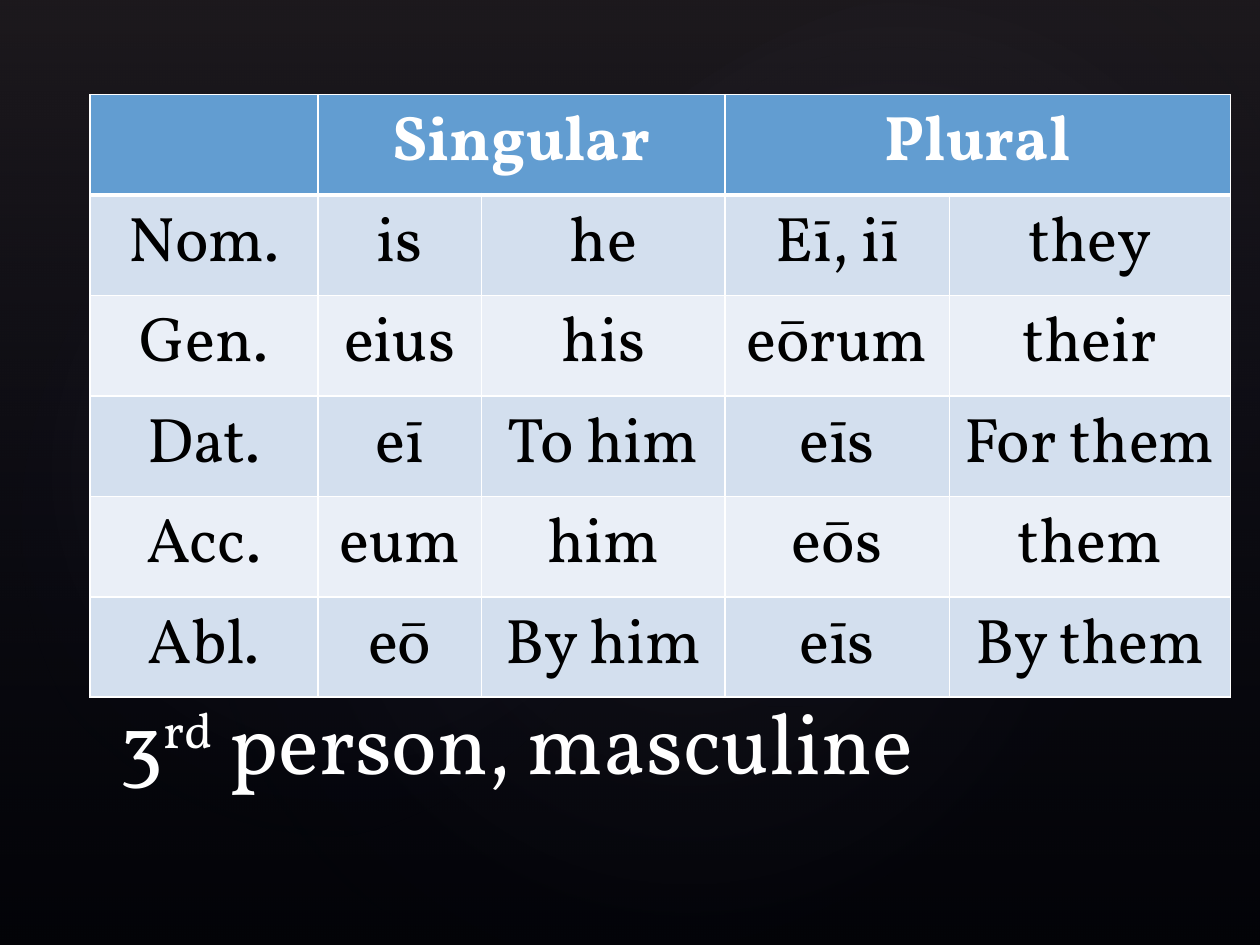
from pptx import Presentation
from pptx.dml.color import RGBColor
from pptx.enum.shapes import MSO_SHAPE as Preset
from pptx.enum.text import MSO_ANCHOR as Anchor, PP_ALIGN as Align
from pptx.oxml import parse_xml
from pptx.oxml.ns import nsdecls, qn
from pptx.util import Pt

FONT = "Vollkorn"
BLACK = RGBColor(0x00, 0x00, 0x00)
WHITE = RGBColor(0xFF, 0xFF, 0xFF)
HEADER_BLUE = RGBColor(0x62, 0x9D, 0xD1)
BAND_DARK = RGBColor(0xD3, 0xDF, 0xEE)
BAND_LIGHT = RGBColor(0xEA, 0xEF, 0xF7)
NAVY = RGBColor(0x24, 0x28, 0x52)
PLUM = RGBColor(0x50, 0x46, 0x52)
MAUVE = RGBColor(0xC4, 0xBC, 0xC6)

DOWNWARD = '<a:lin ang="5400000" scaled="0"/>'
RADIAL = ('<a:path path="circle">'
          '<a:fillToRect l="50000" t="50000" r="50000" b="50000"/></a:path>')
GLOWS = [
    (108, 82, 570, 449, 328.7, 7),
    (-21.6, 92, 436, 353, 294.3, 8),
    (258, 9.4, 510, 374, 328.7, 8),
]

COLUMN_WIDTHS = [130.3, 93.6, 139, 128.2, 160.6]
ROW_HEIGHT = 57.4
DECLENSION = [
    ["", "Singular", "", "Plural", ""],
    ["Nom.", "is", "he", "Eī, iī", "they"],
    ["Gen.", "eius", "his", "eōrum", "their"],
    ["Dat.", "eī", "To him", "eīs", "For them"],
    ["Acc.", "eum", "him", "eōs", "them"],
    ["Abl.", "eō", "By him", "eīs", "By them"],
]


def add_gradient_shape(slide, preset, box, stops, direction, rotation=0):
    shape = slide.shapes.add_shape(preset, *map(Pt, box))
    shape.shadow.inherit = False
    shape.line.fill.background()
    shape.rotation = rotation
    shape.fill.background()
    stop_list = "".join(
        f'<a:gs pos="{position * 1000}"><a:srgbClr val="{color}">'
        f'<a:alpha val="{opacity * 1000}"/></a:srgbClr></a:gs>'
        for position, color, opacity in stops)
    gradient = parse_xml(
        f'<a:gradFill {nsdecls("a")} rotWithShape="1">'
        f'<a:gsLst>{stop_list}</a:gsLst>{direction}</a:gradFill>')
    properties = shape.fill._xPr
    properties.replace(properties.find(qn("a:noFill")), gradient)


def add_backdrop(slide):
    slide.background.fill.solid()
    slide.background.fill.fore_color.rgb = BLACK
    add_gradient_shape(slide, Preset.RECTANGLE, (0, 0, 720, 540),
                       [(0, PLUM, 36), (100, NAVY, 10)], DOWNWARD)
    for *box, rotation, opacity in GLOWS:
        add_gradient_shape(slide, Preset.OVAL, box,
                           [(0, MAUVE, opacity), (58, NAVY, 0)], RADIAL, rotation)


def format_run(run, size, color, bold=False):
    run.font.name = FONT
    run.font.size = Pt(size)
    run.font.bold = bold
    run.font.color.rgb = color


def add_borders(cell, bottom_width):
    properties = cell._tc.get_or_add_tcPr()
    widths = {"lnL": 1, "lnR": 1, "lnT": 1, "lnB": bottom_width}
    for index, (side, width) in enumerate(widths.items()):
        properties.insert(index, parse_xml(
            f'<a:{side} {nsdecls("a")} w="{Pt(width)}"><a:solidFill>'
            f'<a:srgbClr val="{WHITE}"/></a:solidFill></a:{side}>'))


def format_cell(cell, text, row_index):
    header = row_index == 0
    band = BAND_DARK if row_index % 2 else BAND_LIGHT
    cell.text = text
    cell.fill.solid()
    cell.fill.fore_color.rgb = HEADER_BLUE if header else band
    add_borders(cell, 3 if header else 1)
    paragraph = cell.text_frame.paragraphs[0]
    paragraph.alignment = Align.CENTER
    for run in paragraph.runs:
        format_run(run, 36, WHITE if header else BLACK, header)


def add_declension_table(slide):
    table = slide.shapes.add_table(
        len(DECLENSION), len(COLUMN_WIDTHS), Pt(51.4), Pt(54),
        Pt(sum(COLUMN_WIDTHS)), Pt(ROW_HEIGHT * len(DECLENSION))).table
    for column, width in zip(table.columns, COLUMN_WIDTHS):
        column.width = Pt(width)
    for row_index, words in enumerate(DECLENSION):
        table.rows[row_index].height = Pt(ROW_HEIGHT)
        for column_index, word in enumerate(words):
            format_cell(table.cell(row_index, column_index), word, row_index)
    for first in (1, 3):
        table.cell(0, first).merge(table.cell(0, first + 1))


def add_caption(slide):
    box = slide.shapes.add_textbox(Pt(61.2), Pt(383.8), Pt(594), Pt(72))
    frame = box.text_frame
    frame.word_wrap = True
    frame.vertical_anchor = Anchor.BOTTOM
    paragraph = frame.paragraphs[0]
    for text in ("3", "rd", " person, masculine"):
        run = paragraph.add_run()
        run.text = text
        format_run(run, 49, WHITE)
    paragraph.runs[1].font._element.set("baseline", "30000")


def main():
    presentation = Presentation()
    presentation.slide_width = Pt(720)
    presentation.slide_height = Pt(540)
    slide = presentation.slides.add_slide(presentation.slide_layouts[6])
    add_backdrop(slide)
    add_declension_table(slide)
    add_caption(slide)
    presentation.save("out.pptx")


if __name__ == "__main__":
    main()
